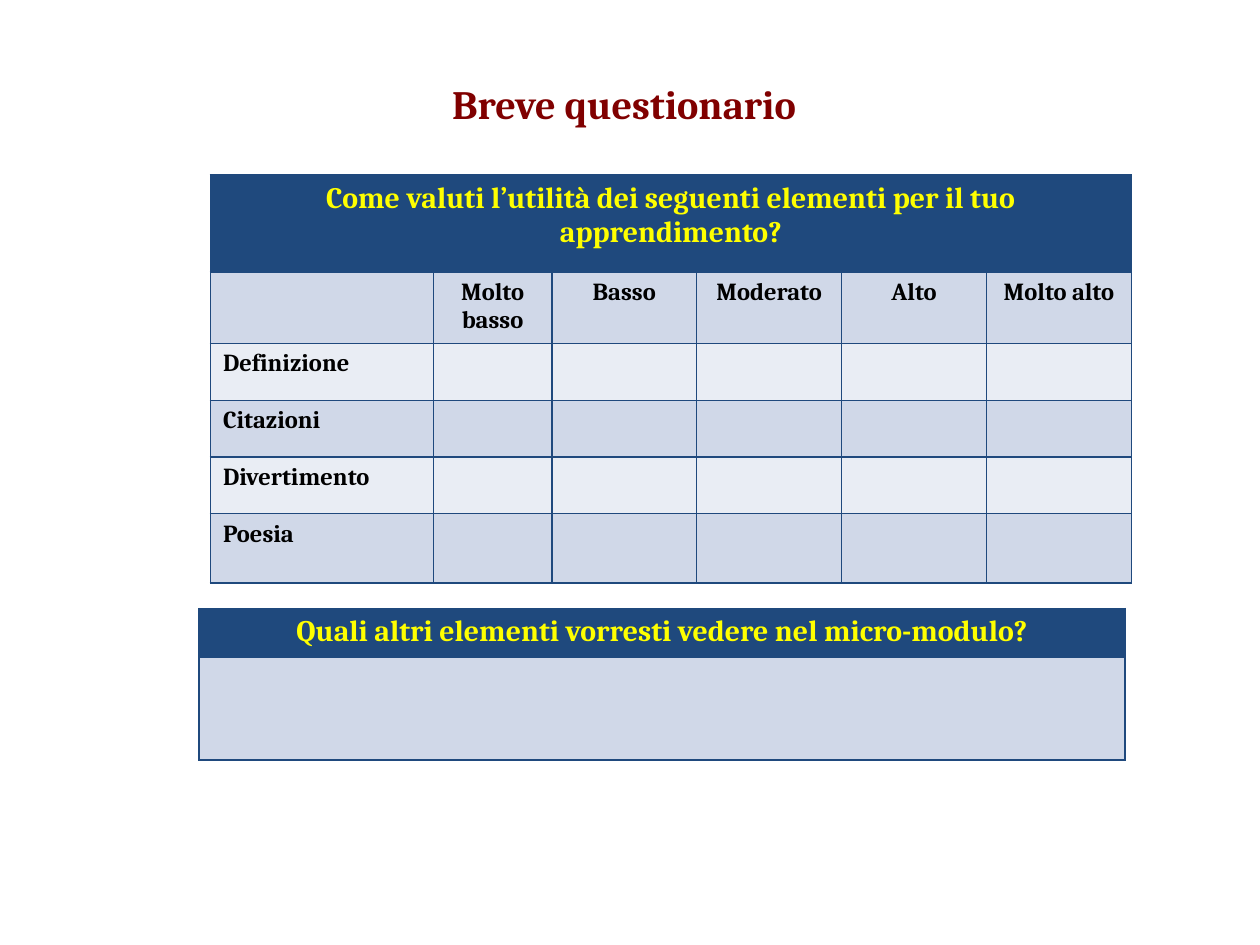
from lxml import etree
from pptx import Presentation
from pptx.dml.color import RGBColor
from pptx.enum.text import PP_ALIGN
from pptx.oxml.ns import qn
from pptx.util import Inches, Pt

CENTER, LEFT = PP_ALIGN.CENTER, PP_ALIGN.LEFT
MAROON = RGBColor(0x80, 0x00, 0x00)
NAVY = RGBColor(0x1F, 0x49, 0x7D)
YELLOW = RGBColor(0xFF, 0xFF, 0x00)
BLACK = RGBColor(0x00, 0x00, 0x00)
BANDS = [RGBColor(0xD0, 0xD8, 0xE8), RGBColor(0xE9, 0xED, 0xF4)]
FONT = "Cambria"

TITLE = "Breve questionario"
RATING_QUESTION = "Come valuti l’utilità dei seguenti elementi per il tuo apprendimento?"
LEVELS = ["Molto basso", "Basso", "Moderato", "Alto", "Molto alto"]
ELEMENTS = ["Definizione", "Citazioni", "Divertimento", "Poesia"]
OPEN_QUESTION = "Quali altri elementi vorresti vedere nel micro-modulo?"

RATING_ROWS = [["", *LEVELS]] + [[name] + [""] * len(LEVELS) for name in ELEMENTS]
TABLES = [
    {"at": (1.67, 1.39), "cols": [1.77, 0.94] + [1.15] * 4,
     "rows": [0.77, 0.55] + [0.45] * 3 + [0.55],
     "question": RATING_QUESTION, "body": RATING_ROWS},
    {"at": (1.58, 4.83), "cols": [7.35], "rows": [0.38, 0.82],
     "question": OPEN_QUESTION, "body": [[""]]},
]


def write(tf, text, size, color, align):
    p = tf.paragraphs[0]
    p.alignment = align
    r = p.add_run()
    r.text = text
    r.font.name, r.font.size, r.font.bold = FONT, Pt(size), True
    r.font.color.rgb = color


def style_cell(cell, fill):
    tcPr = cell._tc.get_or_add_tcPr()
    for side in ("a:lnL", "a:lnR", "a:lnT", "a:lnB"):
        line = etree.SubElement(tcPr, qn(side), w=str(Pt(1)))
        solid = etree.SubElement(line, qn("a:solidFill"))
        etree.SubElement(solid, qn("a:srgbClr"), val=str(NAVY))
    cell.fill.solid()
    cell.fill.fore_color.rgb = fill


def add_question_table(s, at, cols, rows, question, body):
    size = (sum(cols), sum(rows))
    table = s.shapes.add_table(len(rows), len(cols), *map(Inches, at + size)).table
    for column, width in zip(table.columns, cols):
        column.width = Inches(width)
    for row, height in zip(table.rows, rows):
        row.height = Inches(height)

    for cell in table.rows[0].cells:
        style_cell(cell, NAVY)
    heading = table.cell(0, 0)
    if len(cols) > 1:
        heading.merge(table.cell(0, len(cols) - 1))
    write(heading.text_frame, question, 17, YELLOW, CENTER)

    for i, texts in enumerate(body):
        for j, text in enumerate(texts):
            cell = table.cell(i + 1, j)
            style_cell(cell, BANDS[i % 2])
            if text:
                write(cell.text_frame, text, 14, BLACK, CENTER if i == 0 else LEFT)


prs = Presentation()
prs.slide_width, prs.slide_height = Inches(10), Inches(7.5)
s = prs.slides.add_slide(prs.slide_layouts[6])

title = s.shapes.add_textbox(*map(Inches, (2.33, 0.58, 5.25, 0.63)))
title.text_frame.word_wrap = True
write(title.text_frame, TITLE, 23, MAROON, CENTER)

for table in TABLES:
    add_question_table(s, **table)

prs.save("out.pptx")
